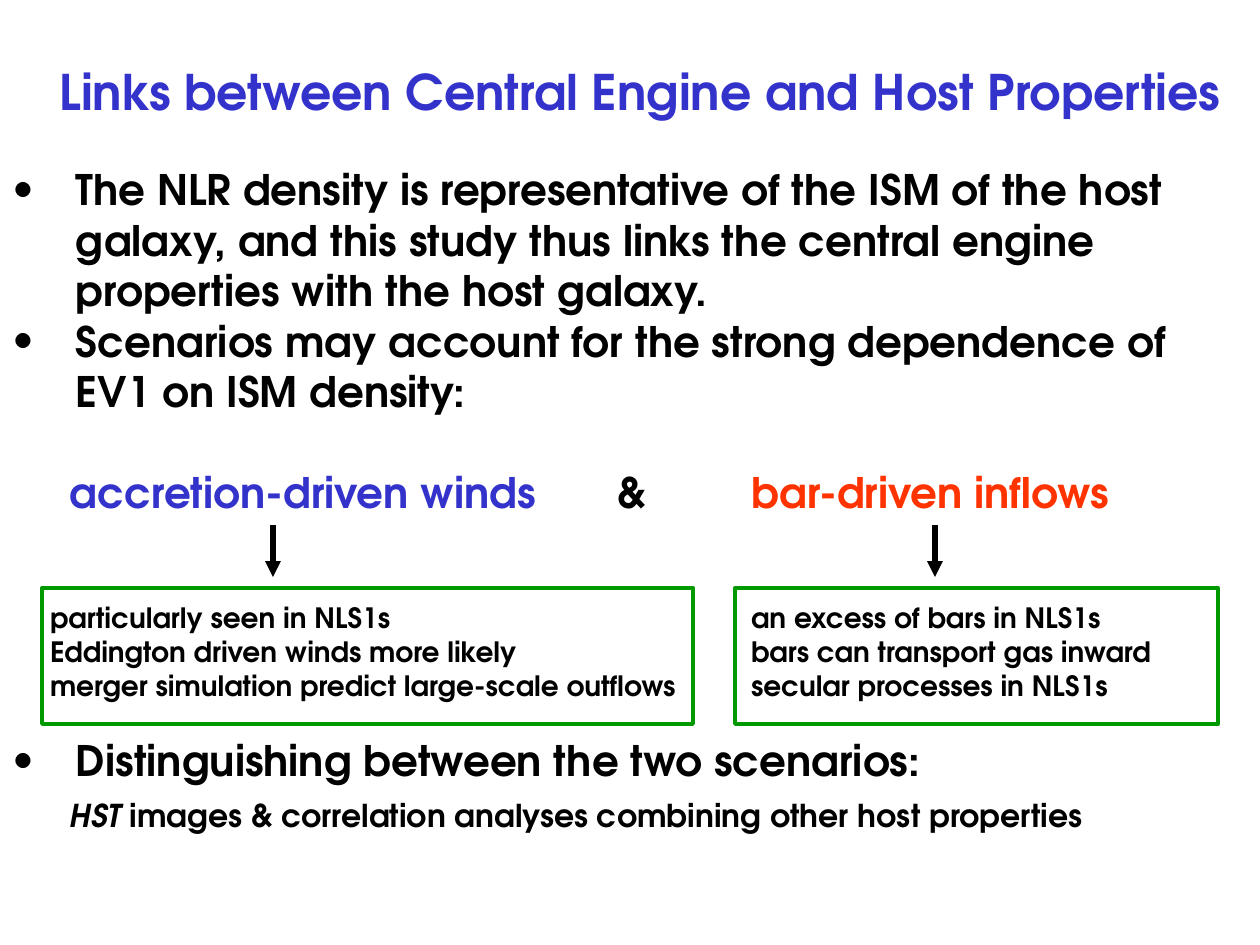
import pptx
import pptx.dml.color
import pptx.enum.shapes
import pptx.enum.text
import pptx.oxml
import pptx.oxml.ns
import pptx.util

RGBColor = pptx.dml.color.RGBColor
BLACK = RGBColor(0x00, 0x00, 0x00)
BLUE = RGBColor(0x33, 0x33, 0xCC)
RED = RGBColor(0xFF, 0x33, 0x00)
GREEN = RGBColor(0x00, 0x99, 0x00)
FONT = "TeX Gyre Adventor"
BULLET_INDENT = 63


def px(n):
    return pptx.util.Emu(round(n * 914400 / 126))


def add_child(parent, tag, **attributes):
    child = parent.makeelement(pptx.oxml.ns.qn(tag), attributes)
    parent.append(child)
    return child


def set_frame(tf, left=0, top=0, wrap=True):
    tf.margin_left, tf.margin_top = px(left), px(top)
    tf.margin_right = tf.margin_bottom = 0
    tf.word_wrap = wrap
    tf.vertical_anchor = pptx.enum.text.MSO_ANCHOR.TOP


def add_run(p, text, size, color=BLACK, italic=False):
    r = p.add_run()
    r.text = text
    r.font.name = FONT
    r.font.size = pptx.util.Pt(size)
    r.font.bold = True
    r.font.italic = italic
    r.font.color.rgb = color


def fill_lines(tf, lines, size, color=BLACK, align=pptx.enum.text.PP_ALIGN.LEFT):
    for i, line in enumerate(lines):
        p = tf.paragraphs[0] if i == 0 else tf.add_paragraph()
        p.alignment = align
        add_run(p, line, size, color)


def add_text(s, left, top, width, height, wrap=True):
    tf = s.shapes.add_textbox(px(left), px(top), px(width), px(height)).text_frame
    set_frame(tf, wrap=wrap)
    return tf


def add_bullets(s, top, height, items):
    tf = add_text(s, 13, top, 1234, height)
    fill_lines(tf, items, 24)
    for p in tf.paragraphs:
        pPr = p._p.get_or_add_pPr()
        pPr.set("marL", str(px(BULLET_INDENT)))
        pPr.set("indent", str(-px(BULLET_INDENT)))
        add_child(pPr, "a:buFont", typeface=FONT)
        add_child(pPr, "a:buChar", char="•")


def add_evidence_box(s, left, width, inset, lines):
    sp = s.shapes.add_shape(pptx.enum.shapes.MSO_SHAPE.RECTANGLE,
                            px(left), px(588), px(width), px(136))
    sp.shadow.inherit = False
    sp.fill.background()
    sp.line.color.rgb = GREEN
    sp.line.width = pptx.util.Pt(2.25)
    set_frame(sp.text_frame, left=inset, top=13, wrap=False)
    fill_lines(sp.text_frame, lines, 16)


def add_down_arrow(s, x):
    line = s.shapes.add_connector(pptx.enum.shapes.MSO_CONNECTOR.STRAIGHT,
                                  px(x), px(525), px(x), px(577))
    line.line.color.rgb = BLACK
    line.line.width = pptx.util.Pt(3)
    add_child(line.line._get_or_add_ln(), "a:tailEnd", type="triangle")
    add_child(line._element.spPr, "a:effectLst")


def main():
    prs = pptx.Presentation()
    prs.slide_width, prs.slide_height = px(1260), px(945)
    s = prs.slides.add_slide(prs.slide_layouts[6])

    title = add_text(s, 20, 62, 1240, 59)
    fill_lines(title, ["Links between Central Engine and Host Properties"], 28, BLUE,
               pptx.enum.text.PP_ALIGN.CENTER)

    add_bullets(s, 164, 253, [
        "The NLR density is representative of the ISM of the host galaxy, "
        "and this study thus links the central engine properties with the host galaxy.",
        "Scenarios may account for the strong dependence of EV1 on ISM density:",
    ])

    for left, width, text, color in (
        (70, 480, "accretion-driven winds", BLUE),
        (618, 40, "&", BLACK),
        (752, 380, "bar-driven inflows", RED),
    ):
        fill_lines(add_text(s, left, 467, width, 51, wrap=False), [text], 24, color)

    for x in (273, 935):
        add_down_arrow(s, x)

    add_evidence_box(s, 42, 651, 8, [
        "particularly seen in NLS1s",
        "Eddington driven winds more likely",
        "merger simulation predict large-scale outflows",
    ])
    add_evidence_box(s, 735, 483, 16, [
        "an excess of bars in NLS1s",
        "bars can transport gas inward",
        "secular processes in NLS1s",
    ])

    add_bullets(s, 735, 51, ["Distinguishing between the two scenarios:"])
    p = add_text(s, 70, 796, 1100, 38).paragraphs[0]
    add_run(p, "HST", 18, italic=True)
    add_run(p, " images & correlation analyses combining other host properties", 18)

    prs.save("out.pptx")


if __name__ == "__main__":
    main()
